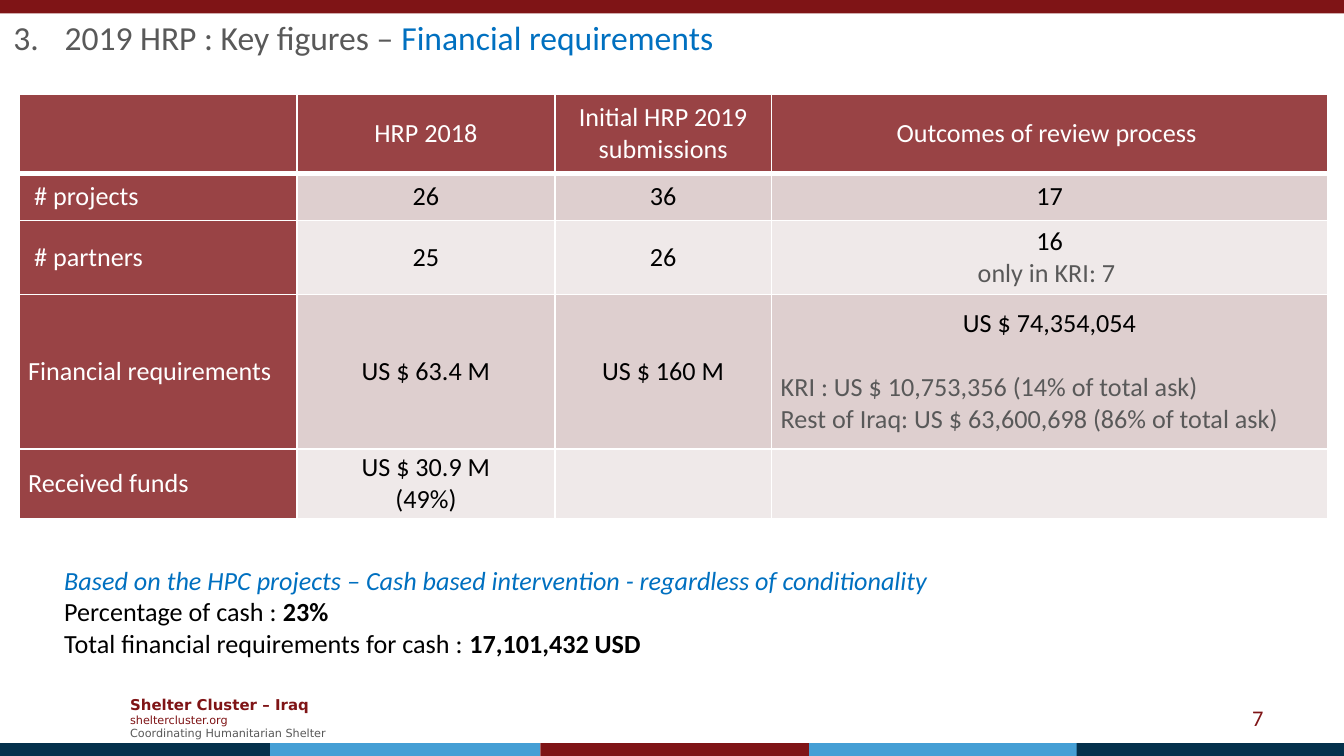
from lxml.etree import Element, SubElement
from pptx import Presentation
from pptx.dml.color import RGBColor
from pptx.enum.shapes import MSO_SHAPE
from pptx.enum.text import MSO_ANCHOR, MSO_AUTO_SIZE, PP_ALIGN
from pptx.oxml.ns import qn
from pptx.util import Inches, Pt

MAROON = RGBColor(0x7F, 0x14, 0x16)
NAVY = RGBColor(0x04, 0x31, 0x4C)
SKY = RGBColor(0x45, 0x9F, 0xD5)
BLUE = RGBColor(0x00, 0x70, 0xC0)
GREY = RGBColor(0x59, 0x59, 0x59)
BLACK = RGBColor(0, 0, 0)
WHITE = RGBColor(0xFF, 0xFF, 0xFF)
HEADER_RED = RGBColor(0x99, 0x43, 0x45)
BANDS = [RGBColor(0xDE, 0xCF, 0xCF), RGBColor(0xEF, 0xE9, 0xE9)]

PAGE_WIDTH = 10
PAGE_HEIGHT = PAGE_WIDTH * 9 / 16
COLUMN_WIDTHS = [2.07, 1.92, 1.61, 4.14]
ROW_HEIGHTS = [0.59, 0.35, 0.55, 1.15, 0.52]
HEADINGS = ["", "HRP 2018", "Initial HRP 2019 submissions", "Outcomes of review process "]
# Each row is a label followed by the centred lines of its cells.
FIGURES = [
    [" # projects", ["26"], ["36"], ["17"]],
    [" # partners", ["25"], ["26"], ["16"]],
    ["Financial requirements", ["US $ 63.4 M"], ["US $ 160 M"], ["US $ 74,354,054"]],
    ["Received funds", ["US $ 30.9 M", "(49%)"], [], []],
]
REGIONAL_SPLIT = [
    "KRI : US $ 10,753,356 (14% of total ask)",
    "Rest of Iraq: US $ 63,600,698 (86% of total ask)",
]


def add_span(para, text, size, color, bold=False, italic=False, font="Calibri"):
    span = para.add_run()
    span.text = text
    span.font.name = font
    span.font.size = Pt(size)
    span.font.color.rgb = color
    span.font.bold = bold
    span.font.italic = italic


def next_para(frame):
    """Return the unused first paragraph, or a new one after it."""
    first = frame.paragraphs[0]
    return frame.add_paragraph() if first.runs else first


def add_text_box(page, left, top, width, height, anchor=MSO_ANCHOR.TOP):
    box = page.shapes.add_textbox(Inches(left), Inches(top), Inches(width), Inches(height))
    box.text_frame.word_wrap = True
    box.text_frame.vertical_anchor = anchor
    return box.text_frame


def add_bar(page, left, top, width, height, color):
    bar = page.shapes.add_shape(
        MSO_SHAPE.RECTANGLE, Inches(left), Inches(top), Inches(width), Inches(height))
    bar.shadow.inherit = False
    bar.fill.solid()
    bar.fill.fore_color.rgb = color
    bar.line.fill.background()


def add_bands(page, height):
    add_bar(page, 0, 0, PAGE_WIDTH, height, MAROON)
    for left, color in zip([0, 2.01, 4.02, 6.02, 8.01], [NAVY, SKY, MAROON, SKY, NAVY]):
        add_bar(page, left, 5.53, 2.01, height, color)


def add_footer(page, left, top, width, height):
    frame = add_text_box(page, left, top, width, height, MSO_ANCHOR.MIDDLE)
    for text, size, color in [
        ("Shelter Cluster – Iraq", 8, MAROON),
        ("sheltercluster.org", 6, MAROON),
        ("Coordinating Humanitarian Shelter", 6, GREY),
    ]:
        add_span(next_para(frame), text, size, color, bold=size == 8, font="DejaVu Sans")


def add_page_number(page, left, top, width, height):
    para = add_text_box(page, left, top, width, height, MSO_ANCHOR.MIDDLE).paragraphs[0]
    para.alignment = PP_ALIGN.RIGHT
    add_span(para, "7", 12, MAROON)


def place_title(page, left, top, width, height):
    title = page.shapes.title
    title.left, title.top = Inches(left), Inches(top)
    title.width, title.height = Inches(width), Inches(height)
    frame = title.text_frame
    frame.auto_size = MSO_AUTO_SIZE.NONE
    frame.vertical_anchor = MSO_ANCHOR.MIDDLE
    para = frame.paragraphs[0]
    para.alignment = PP_ALIGN.LEFT
    properties = para._p.get_or_add_pPr()
    properties.set("marL", str(Inches(0.38)))
    properties.set("indent", str(-Inches(0.38)))
    SubElement(properties, qn("a:buAutoNum"), type="arabicPeriod", startAt="3")
    add_span(para, "2019 HRP : Key figures – ", 18, GREY)
    add_span(para, "Financial requirements", 18, BLUE)


def set_borders(cell, **widths):
    """Draw white borders; the lines must come before the fill in the cell."""
    properties = cell._tc.get_or_add_tcPr()
    for index, (side, width) in enumerate(widths.items()):
        line = Element(qn(f"a:ln{side}"), w=str(Pt(width)))
        SubElement(SubElement(line, qn("a:solidFill")), qn("a:srgbClr"), val=str(WHITE))
        properties.insert(index, line)


def fill_cell(cell, lines, fill, color, align=PP_ALIGN.CENTER):
    cell.fill.solid()
    cell.fill.fore_color.rgb = fill
    cell.vertical_anchor = MSO_ANCHOR.MIDDLE
    cell.margin_left = cell.margin_right = Inches(0.07)
    cell.margin_top = cell.margin_bottom = 0
    for line in lines:
        add_cell_line(cell, line, color, align)


def add_cell_line(cell, text, color, align):
    para = next_para(cell.text_frame)
    para.alignment = align
    add_span(para, text, 14, color)
    return para


def add_figures_table(page, left, top, width, height):
    table = page.shapes.add_table(
        len(ROW_HEIGHTS), len(COLUMN_WIDTHS),
        Inches(left), Inches(top), Inches(width), Inches(height)).table
    table.first_col = True
    for column, size in zip(table.columns, COLUMN_WIDTHS):
        column.width = Inches(size)
    for row, size in zip(table.rows, ROW_HEIGHTS):
        row.height = Inches(size)

    for index, heading in enumerate(HEADINGS):
        cell = table.cell(0, index)
        fill_cell(cell, [heading] if heading else [], HEADER_RED, WHITE)
        set_borders(cell, L=1, R=1, T=1, B=3)
    for row, (label, *values) in enumerate(FIGURES, start=1):
        fill_cell(table.cell(row, 0), [label], HEADER_RED, WHITE, PP_ALIGN.LEFT)
        for column, lines in enumerate(values, start=1):
            fill_cell(table.cell(row, column), lines, BANDS[(row - 1) % 2], BLACK)

    add_cell_line(table.cell(2, 3), "only in KRI: 7 ", GREY, PP_ALIGN.CENTER)
    split = [add_cell_line(table.cell(3, 3), line, GREY, PP_ALIGN.LEFT)
             for line in REGIONAL_SPLIT]
    split[0].space_before = Pt(17)


def add_cash_note(page, left, top, width, height):
    frame = add_text_box(page, left, top, width, height)
    add_span(
        next_para(frame),
        "Based on the HPC projects – Cash based intervention - regardless of conditionality",
        14, BLUE, italic=True)
    for label, value in [
        ("Percentage of cash : ", "23%"),
        ("Total financial requirements for cash : ", "17,101,432 USD"),
    ]:
        para = next_para(frame)
        add_span(para, label, 14, BLACK)
        add_span(para, value, 14, BLACK, bold=True)


def main():
    deck = Presentation()
    deck.slide_width, deck.slide_height = Inches(PAGE_WIDTH), Inches(PAGE_HEIGHT)
    page = deck.slides.add_slide(deck.slide_layouts[5])
    add_footer(page, 0.87, 5.12, 1.73, 0.44)
    add_bands(page, 0.1)
    add_page_number(page, 7.17, 5.19, 2.33, 0.3)
    place_title(page, 0, 0.09, PAGE_WIDTH, 0.37)
    add_figures_table(page, 0.14, 0.7, sum(COLUMN_WIDTHS), sum(ROW_HEIGHTS))
    add_cash_note(page, 0.38, 4.15, 8.83, 0.81)
    deck.save("out.pptx")


if __name__ == "__main__":
    main()
